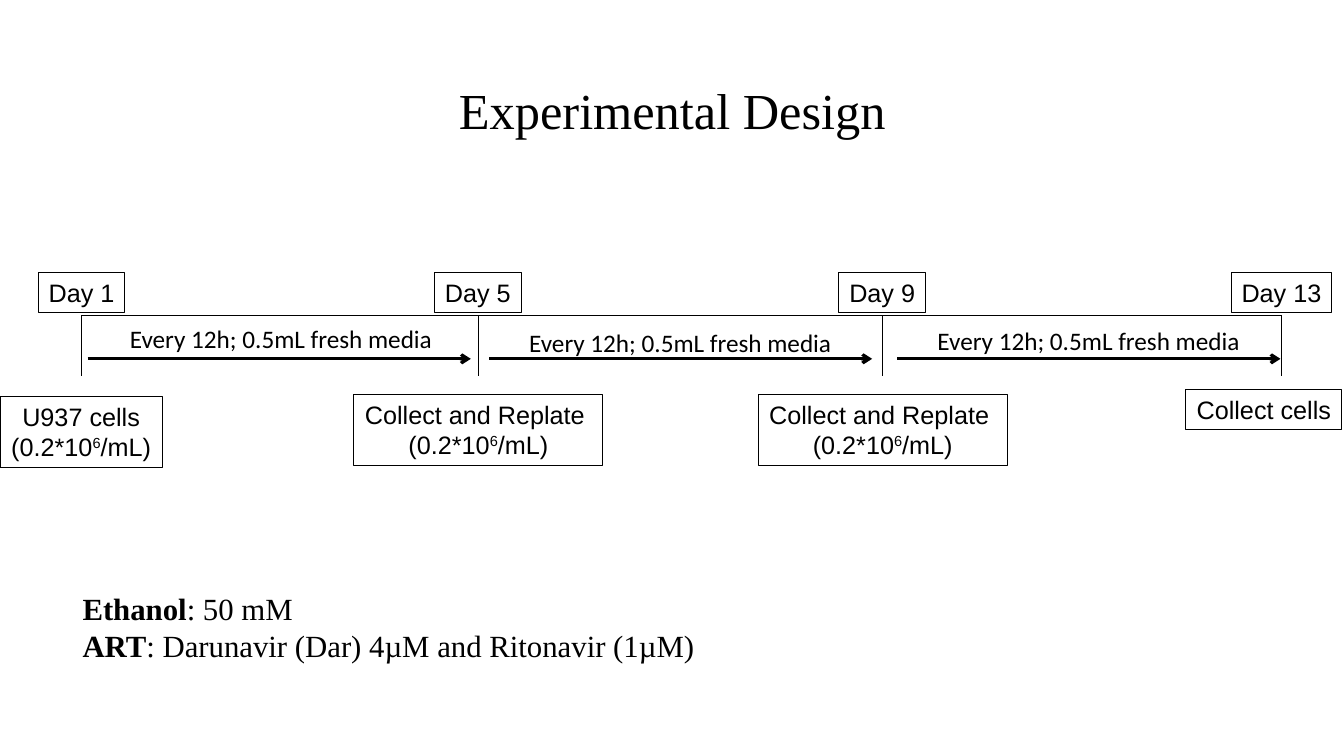
"""Build the experimental design timeline slide."""
from lxml import etree
from pptx import Presentation
from pptx import util as u
from pptx.dml.color import RGBColor
from pptx.enum import shapes, text
from pptx.oxml import ns

PX = 9144
BLACK = RGBColor(0, 0, 0)
AXIS_Y, TICK_HEIGHT = 313, 60
DENSITY = [("(0.2*10", None), ("6", "super"), ("/mL)", None)]
REPLATE = [[("Collect and Replate ", None)], DENSITY]
DAYS = [
    ("Day 1", 81, 86, [[("U937 cells", None)], DENSITY], (0, 393, 161, 71)),
    ("Day 5", 474, 86, REPLATE, (351, 391, 247, 71)),
    ("Day 9", 875, 86, REPLATE, (752, 391, 247, 71)),
    ("Day 13", 1271, 100, [[("Collect cells", None)]], (1176, 386, 155, 40)),
]
INTERVALS = [(87, 119, 316), (485, 515, 320), (890, 920, 318)]
TREATMENTS = [
    [("Ethanol", "bold"), (": 50 mM", None)],
    [("ART", "bold"), (": Darunavir (Dar) 4µM and Ritonavir (1µM)", None)],
]


def px(*lengths):
    """Turn px lengths into EMU."""
    return [u.Emu(length * PX) for length in lengths]


def format_font(paragraph, name, size):
    """Set the black font of a paragraph."""
    paragraph.font.name = name
    paragraph.font.size = u.Pt(size)
    paragraph.font.color.rgb = BLACK


def add_text(slide, box, lines, name, size, align=text.PP_ALIGN.LEFT):
    """Add a text box whose lines are lists of (words, style) runs."""
    shape = slide.shapes.add_textbox(*px(*box))
    frame = shape.text_frame
    frame.word_wrap = False
    frame.auto_size = text.MSO_AUTO_SIZE.SHAPE_TO_FIT_TEXT
    for index, runs in enumerate(lines):
        paragraph = frame.add_paragraph() if index else frame.paragraphs[0]
        paragraph.alignment = align
        format_font(paragraph, name, size)
        for words, style in runs:
            run = paragraph.add_run()
            run.text = words
            if style == "bold":
                run.font.bold = True
            elif style == "super":
                run.font._element.set("baseline", "30000")
    return shape


def add_label(slide, box, lines):
    """Add a centred, outlined label."""
    shape = add_text(slide, box, lines, "Arial", 18, text.PP_ALIGN.CENTER)
    shape.line.color.rgb = BLACK
    shape.line.width = u.Pt(0.75)


def add_line(slide, start, end, width, arrow=False):
    """Add a straight black line, with an arrowhead if wanted."""
    line = slide.shapes.add_connector(
        shapes.MSO_CONNECTOR.STRAIGHT, *px(*start, *end))
    line.line.color.rgb = BLACK
    line.line.width = u.Pt(width)
    if arrow:
        outline = line.line._get_or_add_ln()
        etree.SubElement(outline, ns.qn("a:tailEnd"), type="arrow")
    etree.SubElement(line._element.spPr, ns.qn("a:effectLst"))


def add_title(slide, words):
    """Place and format the title placeholder."""
    title = slide.shapes.title
    title.left, title.top, title.width, title.height = px(92, 40, 1150, 145)
    title.text_frame.text = words
    title.text_frame.vertical_anchor = text.MSO_ANCHOR.MIDDLE
    paragraph = title.text_frame.paragraphs[0]
    paragraph.alignment = text.PP_ALIGN.CENTER
    paragraph.line_spacing = 0.9
    format_font(paragraph, "Times New Roman", 36)


def main():
    """Build and save the slide."""
    presentation = Presentation()
    presentation.slide_width, presentation.slide_height = px(1333, 750)
    slide = presentation.slides.add_slide(presentation.slide_layouts[5])
    add_title(slide, "Experimental Design")
    add_line(slide, (DAYS[0][1], AXIS_Y), (DAYS[-1][1], AXIS_Y), 0.5)
    for day, x, width, step, step_box in DAYS:
        add_line(slide, (x, AXIS_Y), (x, AXIS_Y + TICK_HEIGHT), 0.5)
        add_label(slide, (x - width // 2, 270, width, 40), [[(day, None)]])
        add_label(slide, step_box, step)
    for arrow_x, text_x, text_y in INTERVALS:
        add_line(slide, (arrow_x, 356), (arrow_x + 380, 356), 2.25, True)
        add_text(slide, (text_x, text_y, 323, 40),
                 [[("Every 12h; 0.5mL fresh media", None)]], "Calibri", 18)
    add_text(slide, (72, 580, 628, 84), TREATMENTS, "Times New Roman", 22)
    presentation.save("out.pptx")


if __name__ == "__main__":
    main()
